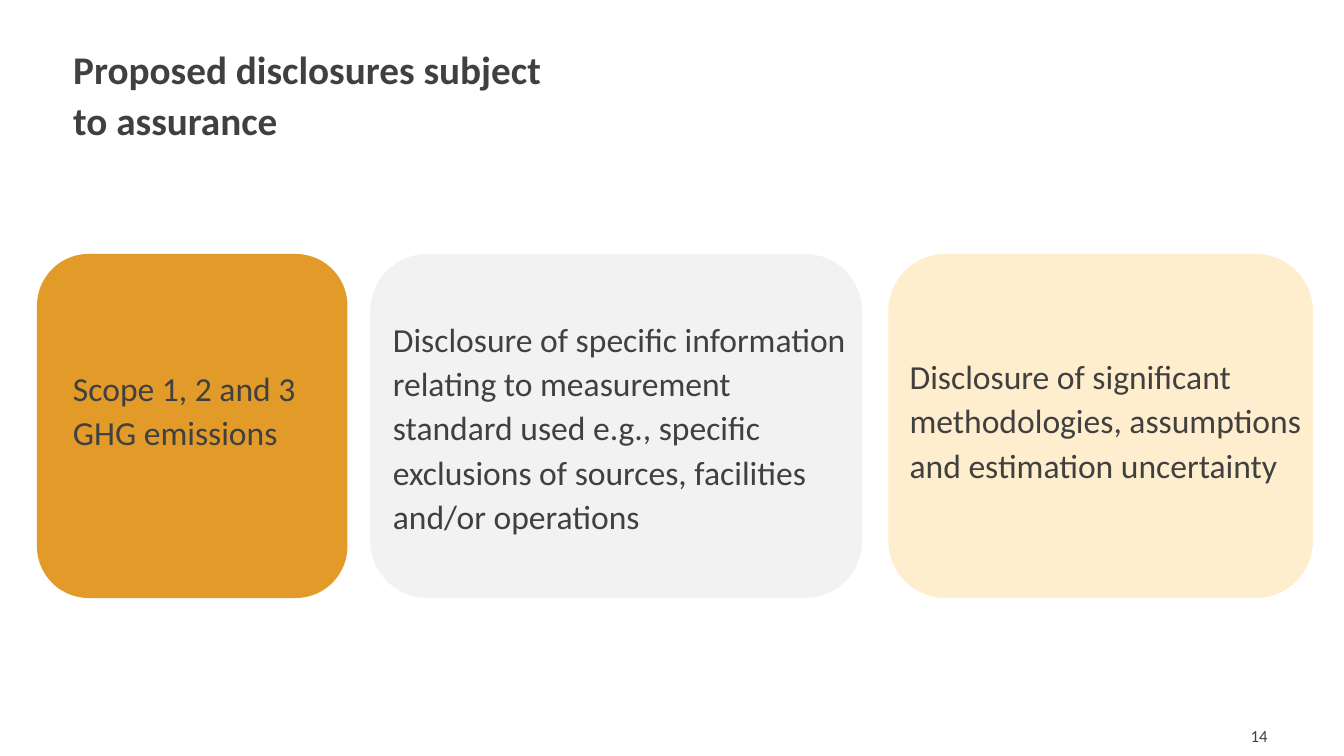
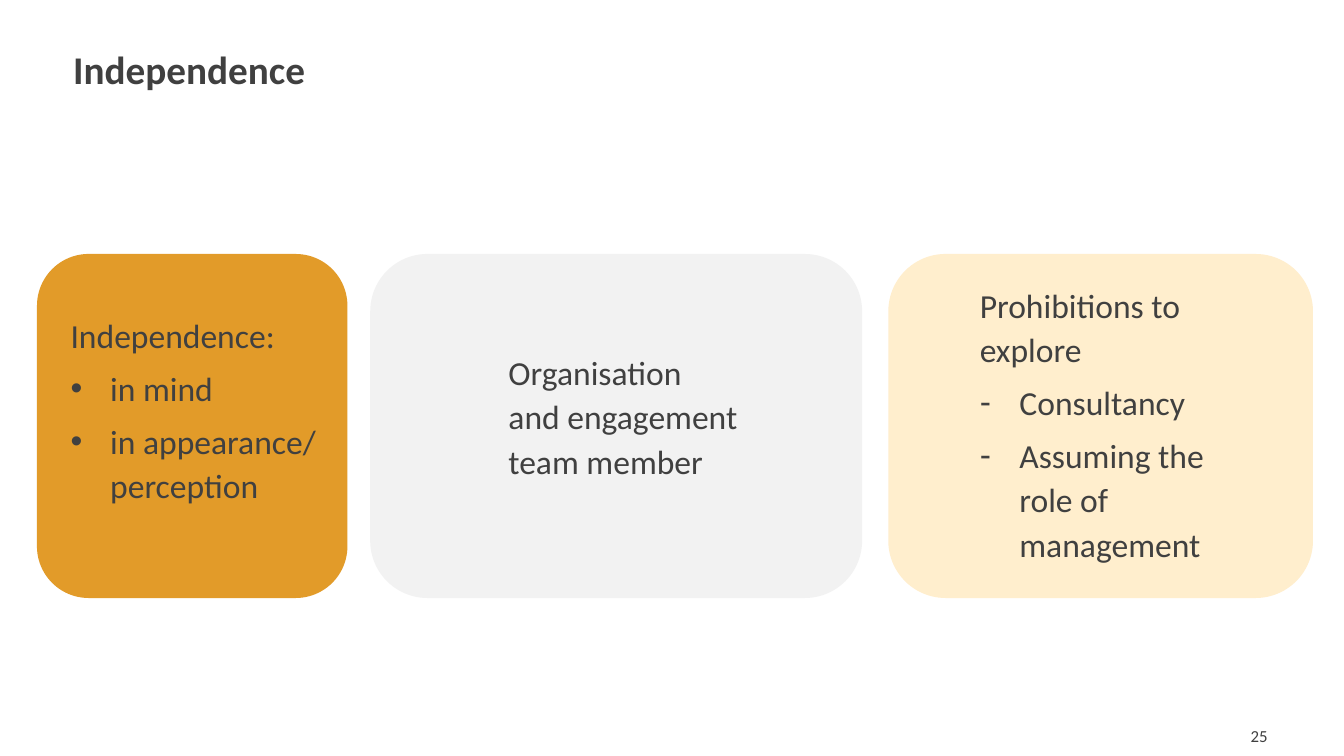
from dataclasses import dataclass

from lxml.etree import SubElement
from pptx import Presentation
from pptx.dml.color import RGBColor
from pptx.enum.shapes import MSO_SHAPE
from pptx.enum.text import MSO_ANCHOR, MSO_AUTO_SIZE, PP_ALIGN
from pptx.oxml.ns import qn
from pptx.shapes.base import BaseShape
from pptx.slide import Slide
from pptx.text.text import TextFrame
from pptx.util import Pt

EMU_PER_PX = 4572
SLIDE_WIDTH, SLIDE_HEIGHT = 2000, 1125
FONT = "Calibri"
INK = RGBColor(0x40, 0x40, 0x40)
AMBER = RGBColor(0xE2, 0x9B, 0x29)
MIST = RGBColor(0xF2, 0xF2, 0xF2)
CREAM = RGBColor(0xFF, 0xEE, 0xCD)

TITLE_ONLY, TWO_CONTENT = 5, 3
CARD_TOP, CARD_HEIGHT = 378, 512
LIST_INDENT = 59


@dataclass(frozen=True)
class Area:
    left: int
    top: int
    width: int
    height: int

    def emu(self) -> list[int]:
        return [px(n) for n in (self.left, self.top, self.width, self.height)]


@dataclass(frozen=True)
class Card:
    left: int
    width: int
    color: RGBColor


@dataclass(frozen=True)
class Message:
    area: Area
    lead: str
    points: tuple[str, ...] = ()
    bullet: str = ""


@dataclass(frozen=True)
class Page:
    number: int
    layout: int
    title: str
    messages: tuple[Message, ...]


TITLE_AREA = Area(89, 50, 744, 174)
NUMBER_AREA = Area(1456, 1065, 450, 60)
CARDS = (Card(1322, 632, CREAM), Card(551, 732, MIST), Card(55, 462, AMBER))

PAGES = (
    Page(14, TITLE_ONLY, "Proposed disclosures subject to assurance", (
        Message(Area(1334, 514, 626, 308),
                "Disclosure of significant methodologies, assumptions "
                "and estimation uncertainty"),
        Message(Area(89, 532, 380, 154), "Scope 1, 2 and 3 GHG emissions"),
        Message(Area(565, 458, 720, 422),
                "Disclosure of specific information relating to measurement "
                "standard used e.g., specific exclusions of sources, "
                "facilities and/or operations"),
    )),
    Page(25, TWO_CONTENT, "Independence", (
        Message(Area(1438, 408, 448, 154), "Prohibitions to explore",
                ("Consultancy", "Assuming the role of management"), "-"),
        Message(Area(85, 453, 422, 154), "Independence:",
                ("in mind", "in appearance/ perception"), "•"),
        Message(Area(737, 508, 394, 336),
                "Organisation\vand engagement team member"),
    )),
)


def px(length: int) -> int:
    return length * EMU_PER_PX


def place(shape: BaseShape, area: Area) -> None:
    shape.left, shape.top, shape.width, shape.height = area.emu()


def write(frame: TextFrame, lines: list[str], size: int, bold: bool = False,
          bullet: str = "") -> None:
    frame.word_wrap = True
    frame.auto_size = MSO_AUTO_SIZE.NONE
    frame.vertical_anchor = MSO_ANCHOR.TOP
    frame.text = lines[0]
    for line in lines[1:]:
        frame.add_paragraph().text = line
    for index, paragraph in enumerate(frame.paragraphs):
        properties = paragraph._p.get_or_add_pPr()
        indent = px(LIST_INDENT) if index else 0
        properties.set("marL", str(indent))
        properties.set("indent", str(-indent))
        if index:
            SubElement(properties, qn("a:buFont")).set("typeface", "Arial")
            SubElement(properties, qn("a:buChar")).set("char", bullet)
        else:
            SubElement(properties, qn("a:buNone"))
        paragraph.alignment = PP_ALIGN.LEFT
        paragraph.line_spacing = 1.1
        paragraph.space_before = Pt(1.5 if index else 0)
        paragraph.space_after = Pt(3)
        for run in paragraph.runs:
            run.font.name = FONT
            run.font.size = Pt(size)
            run.font.bold = bold
            run.font.color.rgb = INK


def add_card(slide: Slide, card: Card) -> None:
    area = Area(card.left, CARD_TOP, card.width, CARD_HEIGHT)
    panel = slide.shapes.add_shape(MSO_SHAPE.ROUNDED_RECTANGLE, *area.emu())
    panel.shadow.inherit = False
    panel.fill.solid()
    panel.fill.fore_color.rgb = card.color
    panel.line.fill.background()


def add_number(slide: Slide, number: int) -> None:
    folio = slide.shapes.add_textbox(*NUMBER_AREA.emu()).text_frame
    write(folio, [str(number)], 9)
    folio.vertical_anchor = MSO_ANCHOR.MIDDLE
    folio.paragraphs[0].alignment = PP_ALIGN.RIGHT
    folio.paragraphs[0].line_spacing = 1.0
    folio.paragraphs[0].space_after = Pt(0)


def add_page(deck: Presentation, page: Page) -> None:
    slide = deck.slides.add_slide(deck.slide_layouts[page.layout])
    heading = slide.shapes.title
    list_bodies = [body for body in slide.placeholders
                   if body.placeholder_format.idx]
    for card in CARDS:
        add_card(slide, card)
    add_number(slide, page.number)
    place(heading, TITLE_AREA)
    write(heading.text_frame, [page.title], 21, bold=True)
    for message in page.messages:
        if message.points:
            body = list_bodies.pop(0)
            place(body, message.area)
            slide.shapes.element.append(body.element)
        else:
            body = slide.shapes.add_textbox(*message.area.emu())
        write(body.text_frame, [message.lead, *message.points], 18,
              bullet=message.bullet)


def main() -> None:
    deck = Presentation()
    deck.slide_width, deck.slide_height = px(SLIDE_WIDTH), px(SLIDE_HEIGHT)
    for page in PAGES:
        add_page(deck, page)
    deck.save("out.pptx")


if __name__ == "__main__":
    main()
